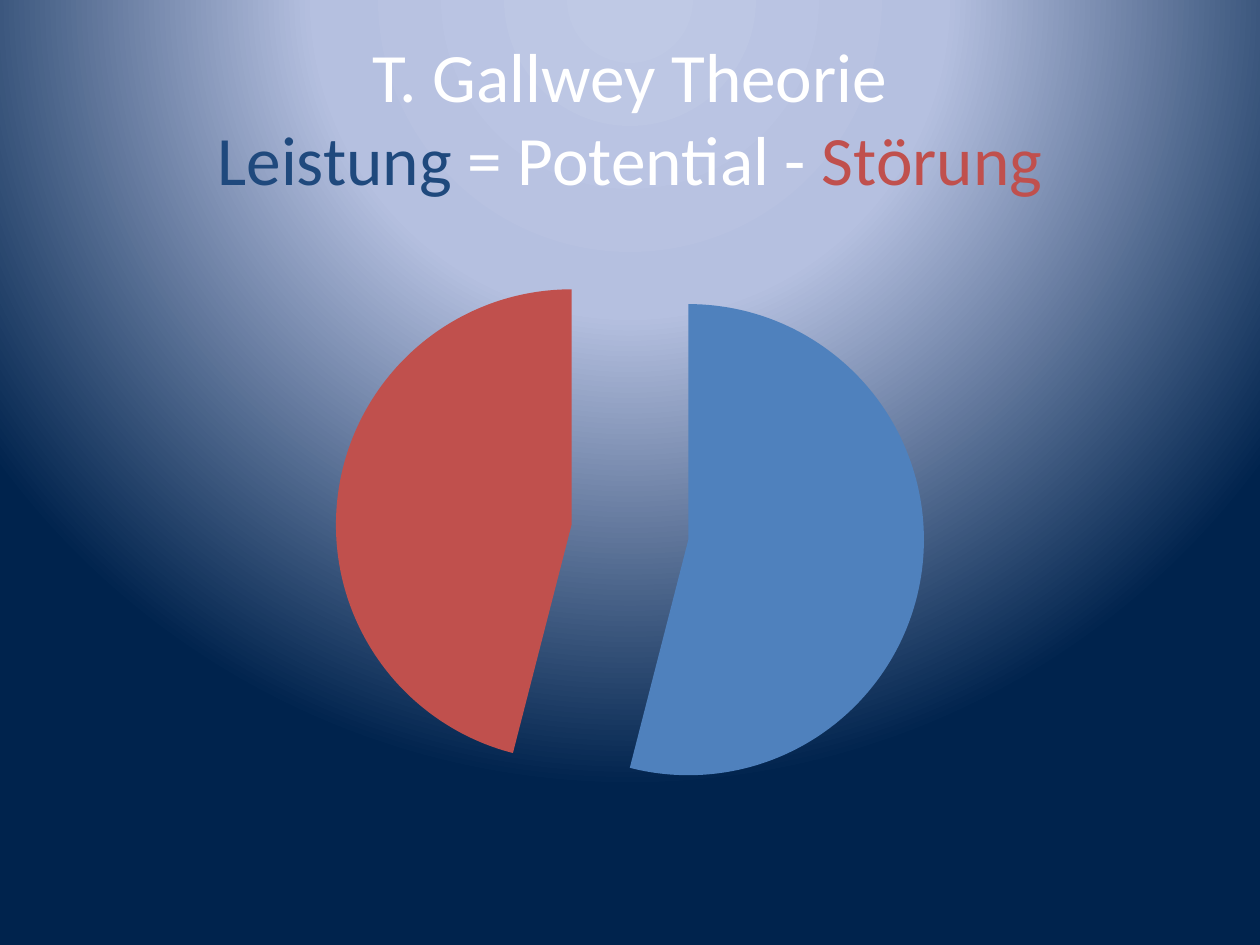
from pptx import Presentation
from pptx.chart.data import CategoryChartData as Data
from pptx.dml.color import RGBColor as RGB
from pptx.enum.chart import XL_CHART_TYPE as Kind
from pptx.enum.text import MSO_ANCHOR as Anchor, PP_ALIGN as Align
from pptx.oxml import parse_xml
from pptx.oxml.ns import nsdecls
from pptx.util import Inches, Pt

COLORS = {
    "white": "FFFFFF", "navy": "1F497D", "blue": "4F81BD", "red": "C0504D",
    "glow": "BFC9E5", "haze": "B5C0E0", "night": "00234D",
}


class Deck:
    """Holds the text style and the current slide."""
    font = "Calibri"

    def __init__(self, width, height):
        self.prs = Presentation()
        self.prs.slide_width = Inches(width)
        self.prs.slide_height = Inches(height)
        self.slide = self.prs.slides.add_slide(self.prs.slide_layouts[6])

    def color(self, name):
        return RGB.from_string(COLORS[name])

    def style(self, font, size, color):
        font.name = self.font
        font.size = Pt(size)
        font.color.rgb = self.color(color)

    def backdrop(self, stops):
        """Fill the background with a round gradient of (percent, colour) stops."""
        marks = "".join(
            f'<a:gs pos="{pos * 1000}"><a:srgbClr val="{COLORS[name]}"/></a:gs>'
            for pos, name in stops)
        self.slide._element.cSld.insert(0, parse_xml(
            f'<p:bg {nsdecls("p", "a")}><p:bgPr><a:gradFill rotWithShape="1">'
            f'<a:gsLst>{marks}</a:gsLst><a:path path="circle">'
            '<a:fillToRect l="50000" t="-80000" r="50000" b="180000"/></a:path>'
            '</a:gradFill><a:effectLst/></p:bgPr></p:bg>'))

    def title(self, box, size, lines):
        """Write centred lines, each a list of (text, colour) parts."""
        frame = self.slide.shapes.add_textbox(*map(Inches, box)).text_frame
        frame.word_wrap = True
        frame.vertical_anchor = Anchor.MIDDLE
        para = frame.paragraphs[0]
        para.alignment = Align.CENTER
        for num, line in enumerate(lines):
            if num:
                para.add_line_break()
            for text, color in line:
                run = para.add_run()
                run.text = text
                self.style(run.font, size, color)

    def pie(self, box, name, slices, burst):
        """Draw a pie of (category, value, colour) slices pulled apart by burst percent."""
        data = Data()
        data.categories = [cat for cat, _, _ in slices]
        data.add_series(name, [val for _, val, _ in slices])
        chart = self.slide.shapes.add_chart(
            Kind.PIE, *map(Inches, box), data).chart
        chart.has_title = False
        chart.has_legend = False
        self.style(chart.font, 18, "white")
        plot = chart.plots[0]
        plot.vary_by_categories = True
        series = plot.series[0]
        series.format.line.fill.background()
        for num, (_, _, color) in enumerate(slices):
            form = series.points[num].format
            form.fill.solid()
            form.fill.fore_color.rgb = self.color(color)
            form.line.fill.background()
        node = series._element
        node.find("{*}dPt").addprevious(
            parse_xml(f'<c:explosion {nsdecls("c")} val="{burst}"/>'))


def main():
    deck = Deck(10, 7.5)
    deck.backdrop([(0, "glow"), (40, "haze"), (100, "night")])
    deck.title((0.5, 0.3, 9, 1.25), 39.6, [
        [("T. Gallwey Theorie", "white")],
        [("Leistung", "navy"), (" = Potential - ", "white"), ("Störung", "red")],
    ])
    deck.pie((0.5, 1.75, 9, 4.95), "Series 1",
             [("1", 54, "blue"), ("2", 46, "red")], 25)
    deck.prs.save("out.pptx")


if __name__ == "__main__":
    main()
